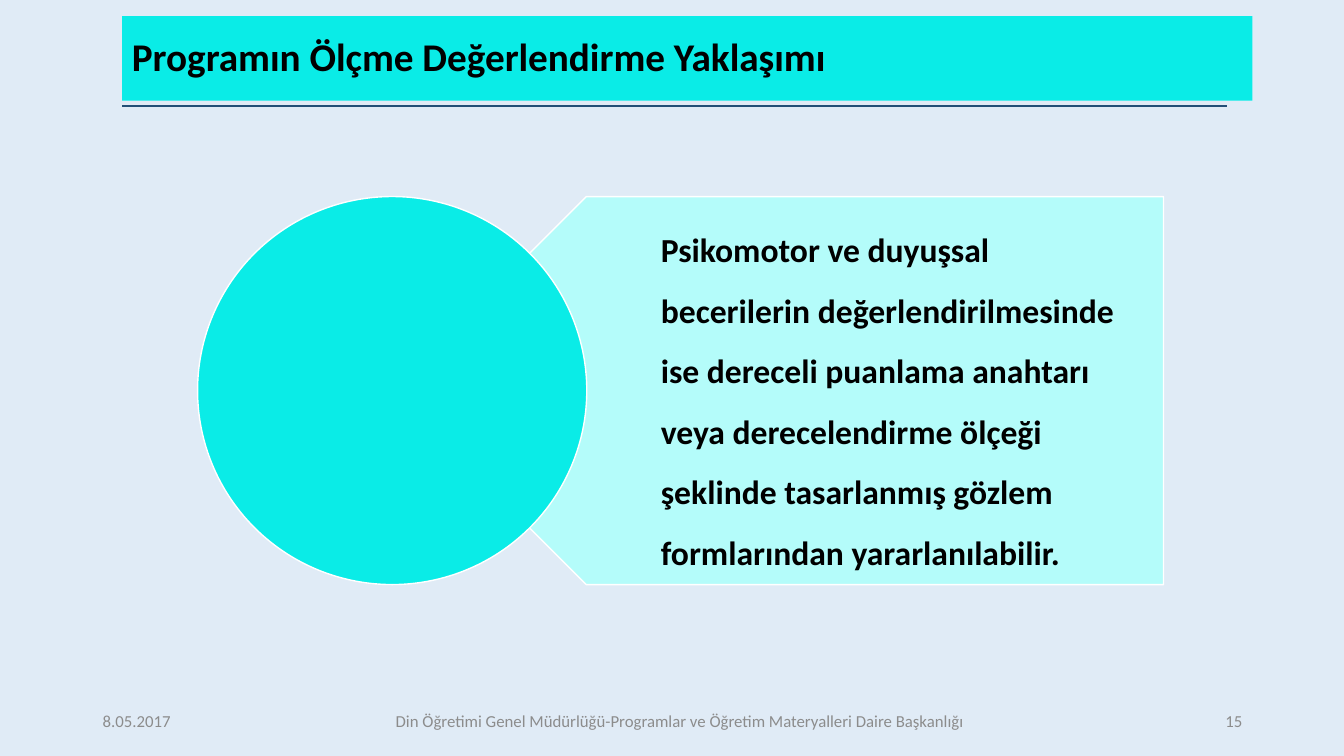
from pptx import Presentation
from pptx.dml.color import RGBColor
from pptx.enum.shapes import MSO_CONNECTOR, MSO_SHAPE
from pptx.enum.text import MSO_ANCHOR, PP_ALIGN
from pptx.oxml.ns import qn
from pptx.util import Inches, Pt
from lxml import etree

RECTANGLE, PENTAGON, OVAL = MSO_SHAPE.RECTANGLE, MSO_SHAPE.PENTAGON, MSO_SHAPE.OVAL
STRAIGHT = MSO_CONNECTOR.STRAIGHT
MIDDLE = MSO_ANCHOR.MIDDLE
LEFT, CENTER, RIGHT = PP_ALIGN.LEFT, PP_ALIGN.CENTER, PP_ALIGN.RIGHT

PALE_BLUE = RGBColor(0xE0, 0xEB, 0xF6)
NAVY = RGBColor(0x23, 0x4F, 0x77)
CYAN = RGBColor(0x0A, 0xEC, 0xE7)
PALE_CYAN = RGBColor(0xB4, 0xFC, 0xFA)
WHITE = RGBColor(0xFF, 0xFF, 0xFF)
BLACK = RGBColor(0, 0, 0)
GREY = RGBColor(0x8C, 0x8C, 0x8C)

deck = Presentation()
deck.slide_width, deck.slide_height = Inches(13.33), Inches(7.5)
page = deck.slides.add_slide(deck.slide_layouts[6])
page.background.fill.solid()
page.background.fill.fore_color.rgb = PALE_BLUE


def area(left, top, width, height):
    """Turn percentages of the slide's size into lengths."""
    across, down = deck.slide_width / 100, deck.slide_height / 100
    return [round(n) for n in (left * across, top * down, width * across, height * down)]


def write(shape, text, size, color, bold=False, align=LEFT):
    frame = shape.text_frame
    frame.word_wrap = True
    frame.vertical_anchor = MIDDLE
    para = frame.paragraphs[0]
    para.alignment = align
    span = para.add_run()
    span.text = text
    span.font.color.rgb = color
    for name, value in {"name": "Calibri", "size": Pt(size), "bold": bold}.items():
        setattr(span.font, name, value)
    return para


# Title band and rule
rule = page.shapes.add_connector(STRAIGHT, *area(9.08, 14, 91.3, 14))
rule.line.color.rgb = NAVY
rule.line.width = Pt(1)
etree.SubElement(rule._element.spPr, qn("a:effectLst"))

band = page.shapes.add_shape(RECTANGLE, *area(9.08, 2.13, 84.1, 11.2))
band.shadow.inherit = False
band.fill.solid()
band.fill.fore_color.rgb = CYAN
band.line.fill.background()
write(band, "Programın Ölçme Değerlendirme Yaklaşımı", 28, BLACK, True).line_spacing = 0.9

# Pentagon pointing left from the circle's centre, its text starting half a point in
top, height = 26, 51.33
circle_left, circle_width = 14.7, 28.96
plate_left, plate_width = circle_left + circle_width / 2, 57.39
text_indent = circle_width / 4

plate = page.shapes.add_shape(PENTAGON, *area(plate_left, top, plate_width, height))
plate.rotation = 180
message = page.shapes.add_textbox(
    *area(plate_left + text_indent, top, plate_width - text_indent, height))
circle = page.shapes.add_shape(OVAL, *area(circle_left, top, circle_width, height))
for shape, color in ((plate, PALE_CYAN), (circle, CYAN)):
    shape.shadow.inherit = False
    shape.fill.solid()
    shape.fill.fore_color.rgb = color
    shape.line.color.rgb = WHITE
    shape.line.width = Pt(1)

insets = {"left": 1.7, "top": 0.1, "right": 0.19, "bottom": 0.1}
for side, inset in insets.items():
    setattr(message.text_frame, f"margin_{side}", Inches(inset))
write(message, "Psikomotor ve duyuşsal becerilerin değerlendirilmesinde ise dereceli "
      "puanlama anahtarı veya derecelendirme ölçeği şeklinde tasarlanmış gözlem "
      "formlarından yararlanılabilir.", 24, BLACK, True).line_spacing = 1.5

# Footer
footer = (
    (6.9, 9.38, LEFT, "8.05.2017"),
    (18.75, 63.69, CENTER,
     "Din Öğretimi Genel Müdürlüğü-Programlar ve Öğretim Materyalleri Daire Başkanlığı"),
    (84.47, 8.7, RIGHT, "15"),
)
for left, width, align, text in footer:
    box = page.shapes.add_textbox(*area(left, 92.67, width, 5.33))
    write(box, text, 12, GREY, align=align)

deck.save("out.pptx")
